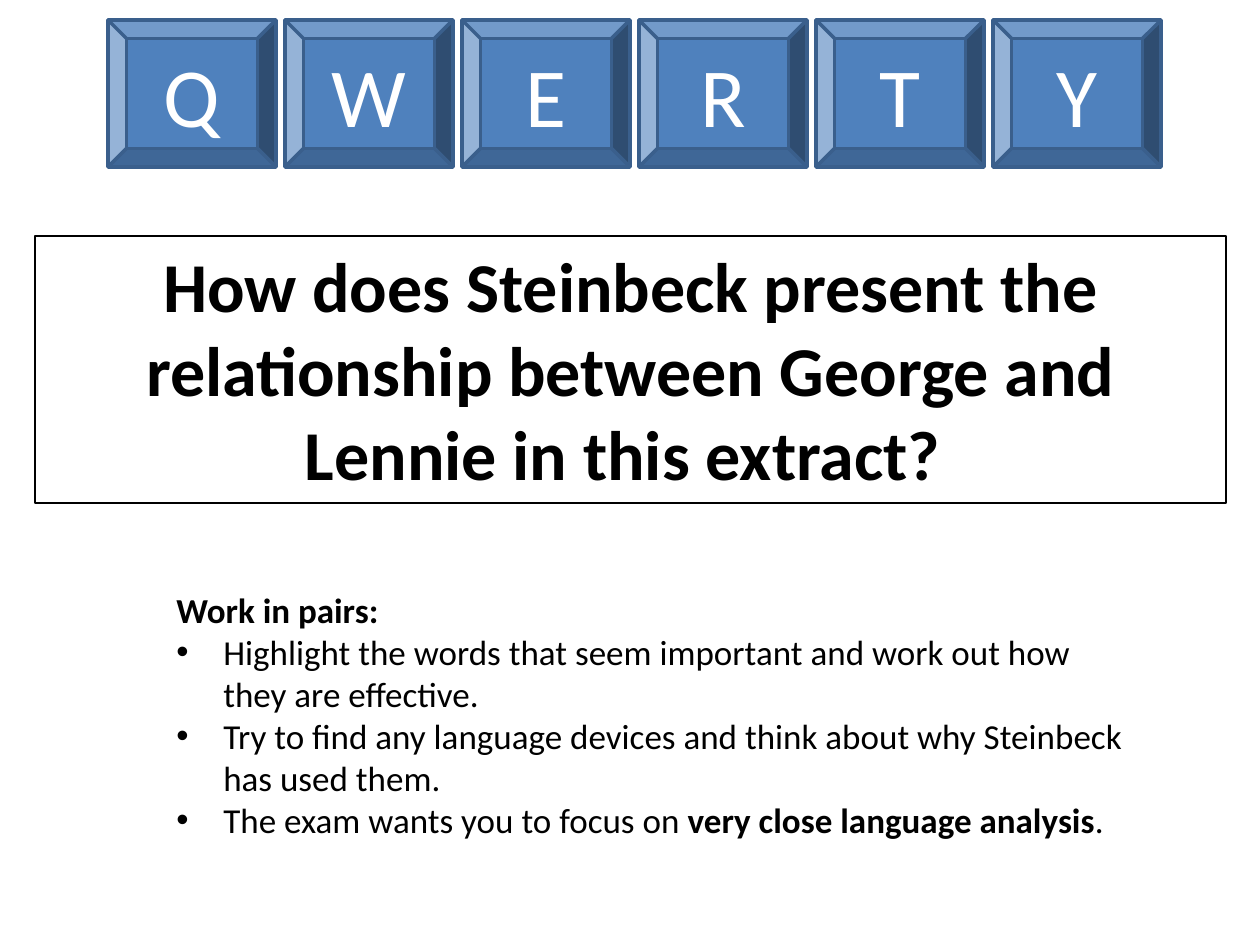
"""Build a slide with a row of lettered keys, an essay question and pair-work tasks."""
from lxml import etree
from pptx import Presentation
from pptx.dml.color import RGBColor
from pptx.enum import shapes, text
from pptx.oxml.ns import qn
from pptx.util import Pt

WHITE = RGBColor(0xFF, 0xFF, 0xFF)
BLACK = RGBColor(0x00, 0x00, 0x00)
KEY_BLUE = RGBColor(0x4F, 0x81, 0xBD)
EDGE_BLUE = RGBColor(0x3A, 0x5F, 0x8C)

KEYS = "QWERTY"
QUESTION = "How does Steinbeck present the relationship between George and Lennie in this extract? "
HEADING = "Work in pairs:"
TASKS = [
    [("Highlight the words that seem important and work out how they are effective.", False)],
    [("Try to find any language devices and think about why Steinbeck has used them.", False)],
    [("The exam wants you to focus on ", False), ("very close language analysis", True), (".", False)],
]

PAGE = (1260, 945)
KEY_LEFT, KEY_TOP, KEY_WIDTH, KEY_HEIGHT, KEY_STEP = 108, 20, 168, 147, 177
QUESTION_AREA = (35, 236, 1191, 267)
TASK_AREA = (164, 582, 973, 267)
BULLET_INDENT = 47

KEY_FONT = {"size": Pt(48), "bold": False, "name": "Calibri"}
QUESTION_FONT = {"size": Pt(40), "bold": True, "name": "Calibri"}
TASK_FONT = {"size": Pt(20), "name": "Calibri"}


def px(length):
    return round(length * 914400 / 126)


def add_span(para, words, color, font):
    span = para.add_run()
    span.text = words
    span.font.color.rgb = color
    for name, value in font.items():
        setattr(span.font, name, value)


def add_key(page, index, letter):
    area = (KEY_LEFT + index * KEY_STEP, KEY_TOP, KEY_WIDTH, KEY_HEIGHT)
    key = page.shapes.add_shape(shapes.MSO_SHAPE.BEVEL, *map(px, area))
    key.shadow.inherit = False
    key.fill.solid()
    key.fill.fore_color.rgb = KEY_BLUE
    key.line.color.rgb = EDGE_BLUE
    key.line.width = Pt(2)
    key.text_frame.vertical_anchor = text.MSO_ANCHOR.MIDDLE
    para = key.text_frame.paragraphs[0]
    para.alignment = text.PP_ALIGN.CENTER
    add_span(para, letter, WHITE, KEY_FONT)


def add_box(page, area):
    box = page.shapes.add_textbox(*map(px, area))
    box.text_frame.word_wrap = True
    box.text_frame.auto_size = text.MSO_AUTO_SIZE.SHAPE_TO_FIT_TEXT
    return box


def add_bullet(para):
    props = para._p.get_or_add_pPr()
    props.set("marL", str(px(BULLET_INDENT)))
    props.set("indent", str(-px(BULLET_INDENT)))
    etree.SubElement(props, qn("a:buFont"), typeface="Arial")
    etree.SubElement(props, qn("a:buChar"), char="•")


def main():
    deck = Presentation()
    deck.slide_width, deck.slide_height = map(px, PAGE)
    page = deck.slides.add_slide(deck.slide_layouts[6])

    for index, letter in enumerate(KEYS):
        add_key(page, index, letter)

    question = add_box(page, QUESTION_AREA)
    question.line.color.rgb = BLACK
    question.line.width = Pt(0.75)
    para = question.text_frame.paragraphs[0]
    para.alignment = text.PP_ALIGN.CENTER
    add_span(para, QUESTION, BLACK, QUESTION_FONT)

    tasks = add_box(page, TASK_AREA)
    tasks.fill.solid()
    tasks.fill.fore_color.rgb = WHITE
    add_span(tasks.text_frame.paragraphs[0], HEADING, BLACK, {**TASK_FONT, "bold": True})
    for task in TASKS:
        para = tasks.text_frame.add_paragraph()
        add_bullet(para)
        for words, bold in task:
            add_span(para, words, BLACK, {**TASK_FONT, "bold": bold})

    deck.save("out.pptx")


if __name__ == "__main__":
    main()
